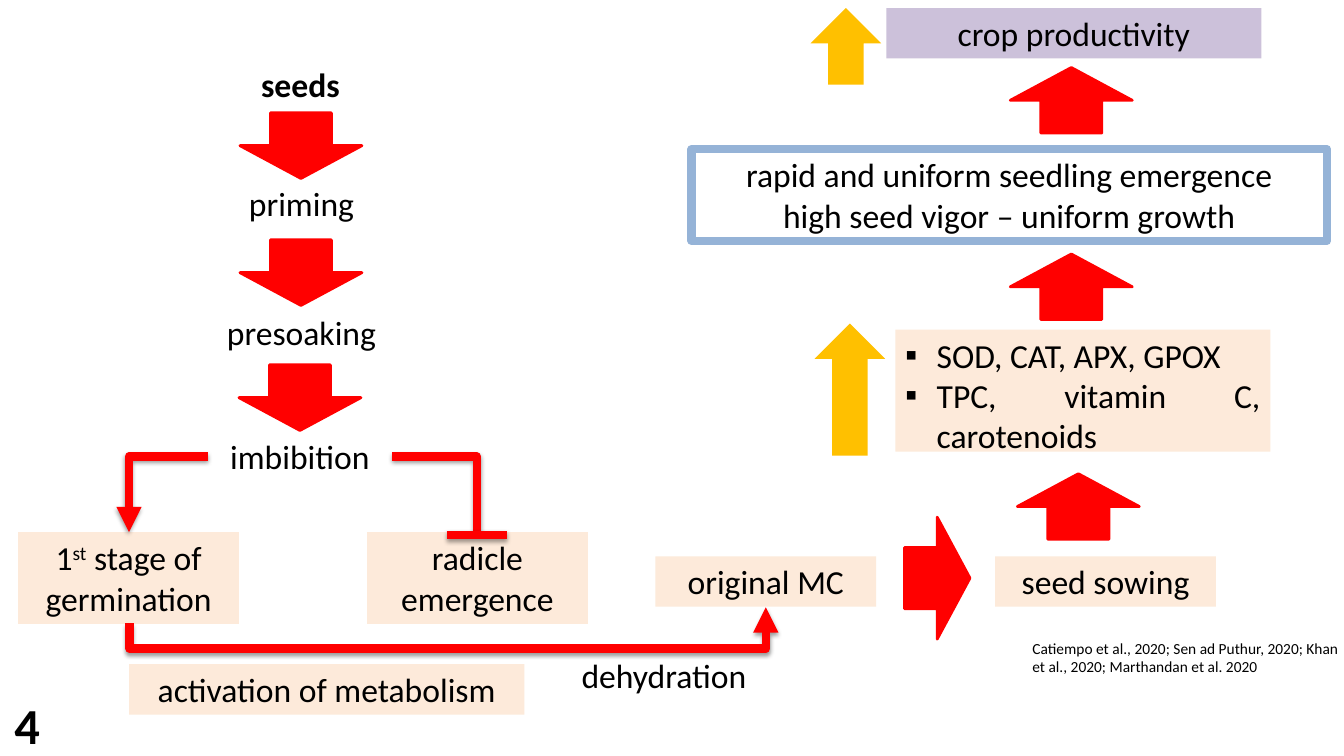
from typing import NamedTuple, Optional

from lxml.etree import SubElement
from pptx import Presentation
from pptx.dml.color import RGBColor
from pptx.enum.shapes import MSO_CONNECTOR, MSO_SHAPE
from pptx.enum.text import MSO_ANCHOR, MSO_AUTO_SIZE, PP_ALIGN
from pptx.oxml.ns import qn
from pptx.util import Inches, Pt

BLACK = RGBColor(0, 0, 0)
RED = RGBColor(0xFF, 0, 0)
GOLD = RGBColor(0xFF, 0xC0, 0)
PEACH = RGBColor(0xFD, 0xEA, 0xDA)
LILAC = RGBColor(0xCC, 0xC1, 0xDA)
BLUE = RGBColor(0x95, 0xB3, 0xD7)
FONT = "Calibri"


class Area(NamedTuple):
    left: float
    top: float
    width: float
    height: float


class Label(NamedTuple):
    area: Area
    lines: list[str]
    size: int = 24
    bold: bool = False
    align: PP_ALIGN = PP_ALIGN.CENTER


class Panel(NamedTuple):
    label: Label
    fill: Optional[RGBColor] = PEACH
    edge: Optional[RGBColor] = None


class Arrow(NamedTuple):
    area: Area
    turn: int = 0
    kind: MSO_SHAPE = MSO_SHAPE.DOWN_ARROW
    color: RGBColor = RED
    edge: int = 2


class Link(NamedTuple):
    start: tuple[float, float]
    end: tuple[float, float]
    form: str = "bentConnector2"
    head: bool = False
    turn: int = 0
    bend: Optional[int] = None


def step(top: float, word: str, left: float = 1.8, width: float = 2.38) -> Label:
    return Label(Area(left, top, width, 0.5), [word])


def block(left: float, top: float, turn: int = 0) -> Arrow:
    return Arrow(Area(left, top, 1.21, 0.65), turn)


def rise(left: float, top: float, height: float) -> Arrow:
    return Arrow(Area(left, top, 0.7, height), 0, MSO_SHAPE.UP_ARROW, GOLD, 0)


LIST = Label(Area(8.88, 3.27, 3.72, 1.31),
             ["SOD, CAT, APX, GPOX", "TPC, vitamin C, carotenoids"],
             align=PP_ALIGN.JUSTIFY)
HEADING = Label(Area(1.79, 0.58, 2.38, 0.5), ["seeds"], bold=True)
PANELS = [
    Panel(Label(Area(6.86, 1.48, 6.3, 0.91),
                ["rapid and uniform seedling emergence",
                 "high seed vigor – uniform growth"]), None, BLUE),
    Panel(Label(Area(0.18, 5.28, 2.19, 0.91), ["1^st^ stage of germination"])),
    Panel(Label(Area(3.64, 5.28, 2.19, 0.91), ["radicle emergence"])),
    Panel(step(5.52, "original MC", 6.5, 2.19)),
    Panel(step(5.52, "seed sowing", 9.87, 2.19)),
    Panel(step(6.59, "activation of metabolism", 1.28, 3.92)),
    Panel(step(0.08, "crop productivity", 8.79, 3.72), LILAC),
]
LABELS = [
    step(1.77, "priming"),
    step(3.05, "presoaking"),
    step(4.28, "imbibition", 2.06, 1.83),
    step(6.45, "dehydration", 5.58, 2.01),
    Label(Area(10.14, 6.29, 3.38, 0.47),
          ["Catiempo et al., 2020; Sen ad Puthur, 2020; "
           "Khan et al., 2020; Marthandan et al. 2020"], 11, align=PP_ALIGN.LEFT),
    Label(Area(-0.22, 6.84, 0.98, 0.71), ["4"], 36, True),
]
ARROWS = [
    block(2.38, 1.12), block(2.38, 2.38), block(2.37, 3.62),
    block(8.69, 5.41, 270),
    block(10.09, 4.7, 180), block(10.02, 2.52, 180), block(10.02, 0.67, 180),
    rise(8.08, 3.21, 1.31), rise(8.04, 0.08, 0.76),
]
LINKS = [
    Link((2.06, 4.53), (1.28, 5.28), head=True),
    Link((3.89, 4.53), (4.73, 5.28)),
    Link((4.43, 5.31), (5.03, 5.31), "line"),
    Link((4.52, 9.26), (4.36, 2.95), "bentConnector3", True, 90, -156600),
]


def place(shape, area: Area) -> None:
    shape.left, shape.top, shape.width, shape.height = map(Inches, area)


def write(shape, label: Label) -> None:
    frame = shape.text_frame
    frame.word_wrap = True
    frame.auto_size = MSO_AUTO_SIZE.SHAPE_TO_FIT_TEXT
    frame.vertical_anchor = MSO_ANCHOR.TOP
    for index, line in enumerate(label.lines):
        para = frame.add_paragraph() if index else frame.paragraphs[0]
        para.alignment = label.align
        para.space_before = Pt(0)
        for place_no, part in enumerate(line.split("^")):
            run = para.add_run()
            run.text = part
            font = run.font
            font.name, font.size, font.bold = FONT, Pt(label.size), label.bold
            font.color.rgb = BLACK
            if place_no % 2:
                run._r.get_or_add_rPr().set("baseline", "30000")


def paint(shape, fill: Optional[RGBColor], edge: Optional[RGBColor], width: int) -> None:
    shape.shadow.inherit = False
    if fill is None:
        shape.fill.background()
    else:
        shape.fill.solid()
        shape.fill.fore_color.rgb = fill
    if edge is None:
        shape.line.fill.background()
    else:
        shape.line.color.rgb = edge
        shape.line.width = Pt(width)


def add_panel(shapes, panel: Panel) -> None:
    shape = shapes.add_shape(MSO_SHAPE.RECTANGLE, *map(Inches, panel.label.area))
    paint(shape, panel.fill, panel.edge, 6)
    write(shape, panel.label)


def add_arrow(shapes, arrow: Arrow) -> None:
    shape = shapes.add_shape(arrow.kind, *map(Inches, arrow.area))
    shape.rotation = arrow.turn
    paint(shape, arrow.color, arrow.color if arrow.edge else None, arrow.edge)


def add_link(shapes, link: Link) -> None:
    kind = MSO_CONNECTOR.STRAIGHT if link.form == "line" else MSO_CONNECTOR.ELBOW
    wire = shapes.add_connector(kind, *map(Inches, link.start + link.end))
    wire.line.color.rgb = RED
    wire.line.width = Pt(6)
    props = wire._element.spPr
    shape = props.find(qn("a:prstGeom"))
    shape.set("prst", link.form)
    if link.turn:
        props.find(qn("a:xfrm")).set("rot", str(link.turn * 60000))
    if link.bend is not None:
        guides = shape.find(qn("a:avLst"))
        SubElement(guides, qn("a:gd"), name="adj1", fmla=f"val {link.bend}")
    if link.head:
        SubElement(props.find(qn("a:ln")), qn("a:tailEnd"), type="triangle")
    effects = SubElement(props, qn("a:effectLst"))
    shade = SubElement(effects, qn("a:outerShdw"), blurRad="40000", dist="20000",
                       dir="5400000", rotWithShape="0")
    tint = SubElement(shade, qn("a:srgbClr"), val=str(BLACK))
    SubElement(tint, qn("a:alpha"), val="38000")


def add_list(shape, label: Label) -> None:
    place(shape, label.area)
    shape.fill.solid()
    shape.fill.fore_color.rgb = PEACH
    write(shape, label)
    for para in shape.text_frame.paragraphs:
        props = para._p.get_or_add_pPr()
        props.set("marL", str(Inches(0.31)))
        props.set("indent", str(-Inches(0.31)))
        SubElement(props, qn("a:buFont"), typeface=FONT)
        SubElement(props, qn("a:buChar"), char="▪")


def main() -> None:
    deck = Presentation()
    deck.slide_width, deck.slide_height = Inches(13.33), Inches(7.5)
    slide = deck.slides.add_slide(deck.slide_layouts[1])
    shapes = slide.shapes
    place(shapes.title, HEADING.area)
    write(shapes.title, HEADING)
    add_list(slide.placeholders[1], LIST)
    for panel in PANELS:
        add_panel(shapes, panel)
    for arrow in ARROWS:
        add_arrow(shapes, arrow)
    for link in LINKS:
        add_link(shapes, link)
    for label in LABELS:
        write(shapes.add_textbox(*map(Inches, label.area)), label)
    deck.save("out.pptx")


if __name__ == "__main__":
    main()
